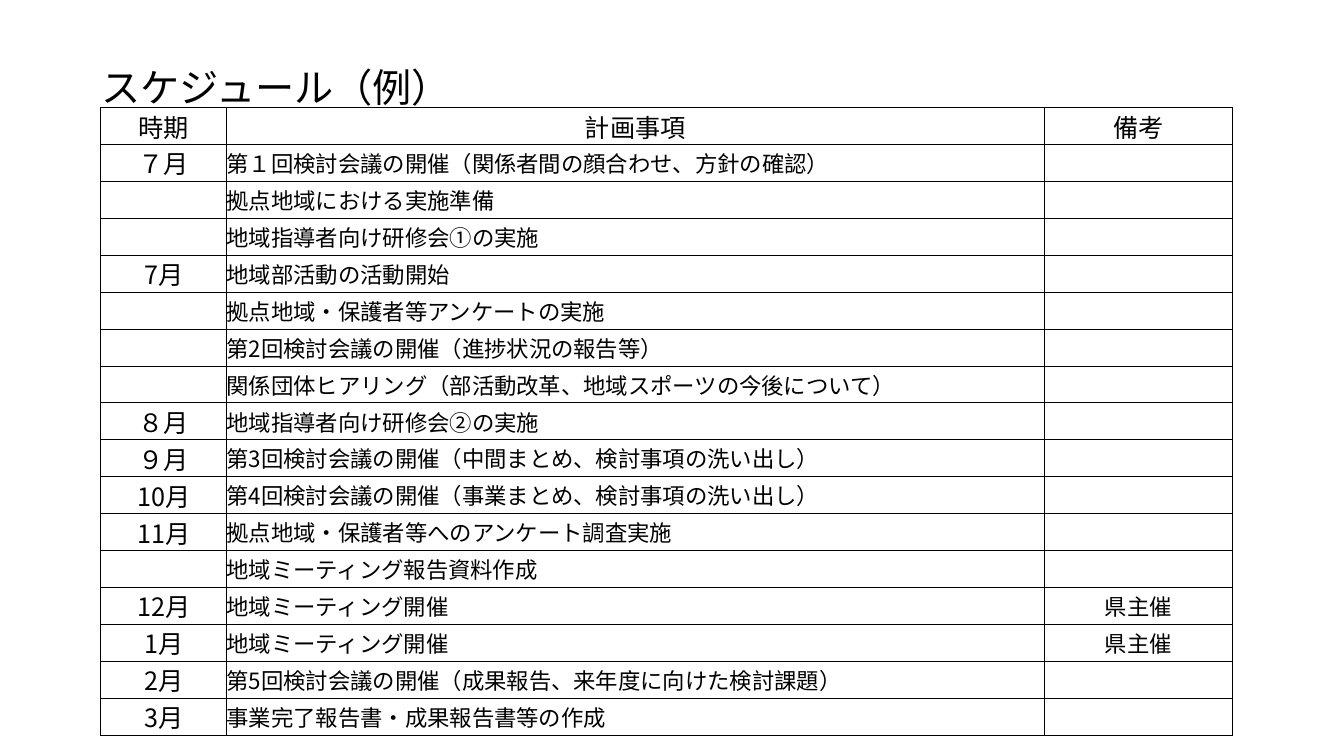
from dataclasses import dataclass

from lxml.etree import SubElement
from pptx import Presentation
from pptx.dml.color import RGBColor
from pptx.enum.text import MSO_ANCHOR as Anchor, PP_ALIGN as Align
from pptx.oxml.ns import qn
from pptx.util import Cm, Pt


@dataclass(frozen=True)
class Theme:
    font: str = "Noto Sans CJK JP"
    ink: str = "000000"
    paper: str = "FFFFFF"
    title_size: int = 28
    label_size: int = 18
    body_size: int = 16
    border_width: float = 0.5


THEME = Theme()
TITLE = "スケジュール（例）"
HEADER = ("時期", "計画事項", "備考")
PLAN = (
    ("７月", "第１回検討会議の開催（関係者間の顔合わせ、方針の確認）", ""),
    ("", "拠点地域における実施準備", ""),
    ("", "地域指導者向け研修会①の実施", ""),
    ("7月", "地域部活動の活動開始", ""),
    ("", "拠点地域・保護者等アンケートの実施", ""),
    ("", "第2回検討会議の開催（進捗状況の報告等）", ""),
    ("", "関係団体ヒアリング（部活動改革、地域スポーツの今後について）", ""),
    ("８月", "地域指導者向け研修会②の実施", ""),
    ("９月", "第3回検討会議の開催（中間まとめ、検討事項の洗い出し）", ""),
    ("10月", "第4回検討会議の開催（事業まとめ、検討事項の洗い出し）", ""),
    ("11月", "拠点地域・保護者等へのアンケート調査実施", ""),
    ("", "地域ミーティング報告資料作成", ""),
    ("12月", "地域ミーティング開催", "県主催"),
    ("1月", "地域ミーティング開催", "県主催"),
    ("2月", "第5回検討会議の開催（成果報告、来年度に向けた検討課題）", ""),
    ("3月", "事業完了報告書・成果報告書等の作成", ""),
)
COLUMN_WIDTHS = (3.17, 20.6, 4.75)
ROW_HEIGHT = 0.93


def write(paragraph, text, size):
    """Set the text in the theme font, for Latin and East Asian letters alike."""
    paragraph.text = text
    for run in paragraph.runs:
        run.font.size = Pt(size)
        run.font.name = THEME.font
        run.font.color.rgb = RGBColor.from_string(THEME.ink)
        SubElement(run.font._element, qn("a:ea"), typeface=THEME.font)


def add_borders(cell):
    properties = cell._tc.get_or_add_tcPr()
    for position, side in enumerate(("a:lnL", "a:lnR", "a:lnT", "a:lnB")):
        line = properties.makeelement(qn(side), {"w": str(Pt(THEME.border_width))})
        fill = SubElement(line, qn("a:solidFill"))
        SubElement(fill, qn("a:srgbClr"), val=THEME.ink)
        properties.insert(position, line)


def fill_cell(cell, text, size, alignment):
    cell.margin_left = cell.margin_right = cell.margin_top = cell.margin_bottom = 0
    cell.vertical_anchor = Anchor.MIDDLE
    cell.fill.solid()
    cell.fill.fore_color.rgb = RGBColor.from_string(THEME.paper)
    add_borders(cell)
    if text:
        paragraph = cell.text_frame.paragraphs[0]
        write(paragraph, text, size)
        paragraph.alignment = alignment


def add_title(slide, left, top, width, height):
    text_frame = slide.shapes.add_textbox(left, top, width, height).text_frame
    text_frame.word_wrap = True
    paragraph = text_frame.paragraphs[0]
    write(paragraph, TITLE, THEME.title_size)
    paragraph.line_spacing = 0.9


def add_schedule(slide, left, top, width, height):
    rows = (HEADER, *PLAN)
    frame = slide.shapes.add_table(len(rows), len(HEADER), left, top, width, height)
    table = frame.table
    for column, column_width in zip(table.columns, COLUMN_WIDTHS):
        column.width = Cm(column_width)
    for row_index, texts in enumerate(rows):
        table.rows[row_index].height = Cm(ROW_HEIGHT)
        for column_index, text in enumerate(texts):
            is_label = row_index == 0 or column_index == 0
            size = THEME.label_size if is_label else THEME.body_size
            is_plan = row_index > 0 and column_index == 1
            alignment = Align.LEFT if is_plan else Align.CENTER
            fill_cell(table.cell(row_index, column_index), text, size, alignment)


def main():
    presentation = Presentation()
    presentation.slide_width, presentation.slide_height = Cm(33.87), Cm(19.05)
    slide = presentation.slides.add_slide(presentation.slide_layouts[6])
    add_schedule(slide, Cm(2.54), Cm(2.71), Cm(sum(COLUMN_WIDTHS)),
                 Cm(ROW_HEIGHT * (len(PLAN) + 1)))
    add_title(slide, Cm(2.31), Cm(1.6), Cm(25.4), Cm(2.24))
    presentation.save("out.pptx")


if __name__ == "__main__":
    main()
